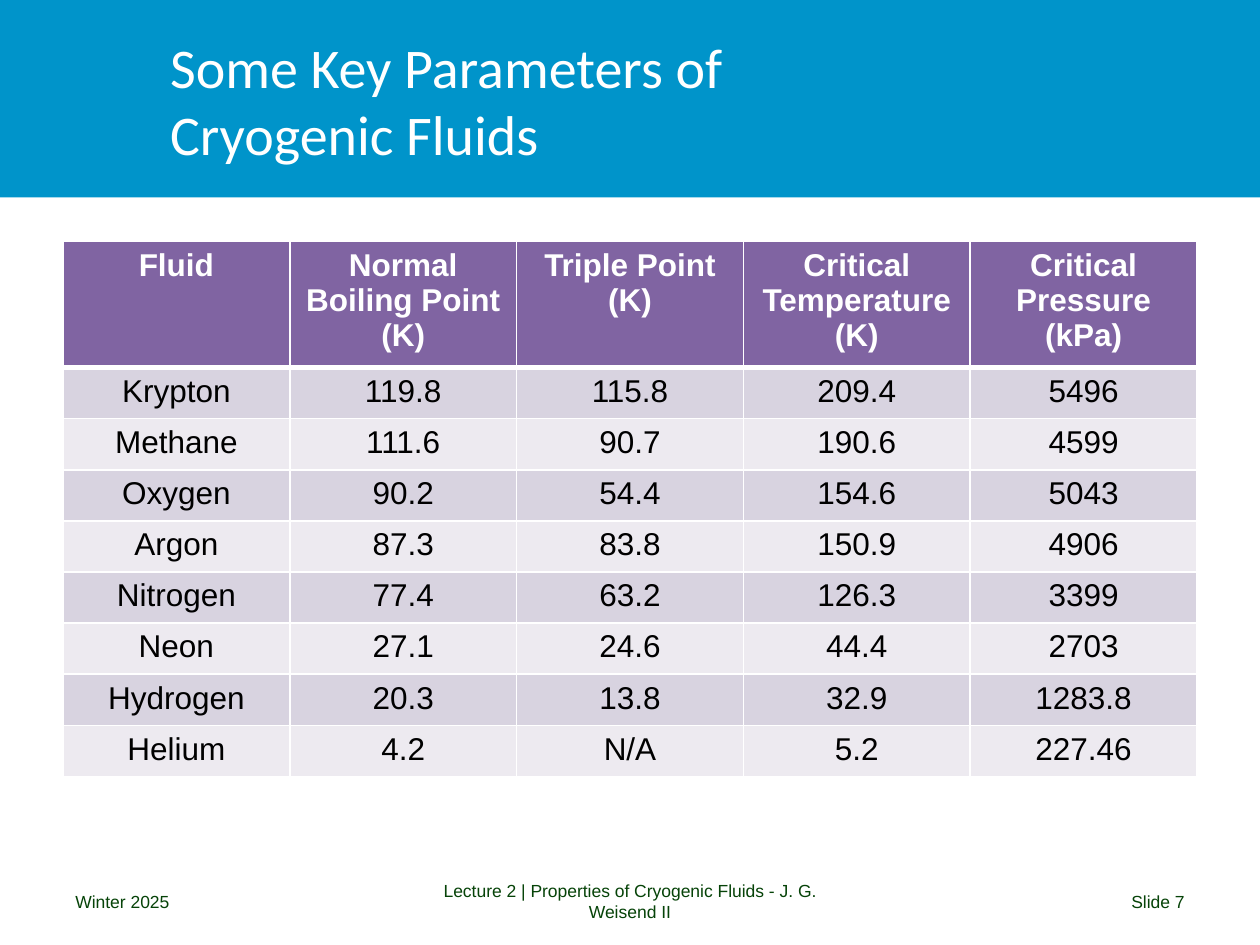
from dataclasses import dataclass

from lxml import etree
from pptx import Presentation
from pptx import util as u
from pptx.dml.color import RGBColor
from pptx.enum import shapes, text
from pptx.oxml.ns import qn


@dataclass(frozen=True)
class Theme:
    """Colours, fonts and type sizes of the slide."""
    banner: str = "0094CA"
    header: str = "8064A2"
    bands: tuple = ("D8D3E0", "EDEAF0")
    white: str = "FFFFFF"
    ink: str = "000000"
    footer: str = "064308"
    title_font: str = "Calibri"
    body_font: str = "Arial"
    title_size: int = 32
    table_size: int = 18
    footer_size: int = 10


THEME = Theme()
ALIGN = text.PP_ALIGN
HEADINGS = ["Fluid", "Normal Boiling Point (K)", "Triple Point (K)",
            "Critical Temperature (K)", "Critical Pressure\n(kPa)"]
FLUIDS = [
    ["Krypton", "119.8", "115.8", "209.4", "5496"],
    ["Methane", "111.6", "90.7", "190.6", "4599"],
    ["Oxygen", "90.2", "54.4", "154.6", "5043"],
    ["Argon", "87.3", "83.8", "150.9", "4906"],
    ["Nitrogen", "77.4", "63.2", "126.3", "3399"],
    ["Neon", "27.1", "24.6", "44.4", "2703"],
    ["Hydrogen", "20.3", "13.8", "32.9", "1283.8"],
    ["Helium", "4.2", "N/A", "5.2", "227.46"],
]


def write(tf, words, *, size, color, font=THEME.body_font, bold=False, align=ALIGN.LEFT):
    """Fill a text frame; a newline starts a paragraph and a vertical tab breaks a line."""
    tf.word_wrap = True
    tf.text = words
    for p in tf.paragraphs:
        p.alignment = align
        for r in p.runs:
            r.font.name, r.font.size, r.font.bold = font, u.Pt(size), bold
            r.font.color.rgb = RGBColor.from_string(color)


def add_label(s, left, top, width, height, words, **fmt):
    """Add a vertically centred text box, with its box in centimetres."""
    sp = s.shapes.add_textbox(u.Cm(left), u.Cm(top), u.Cm(width), u.Cm(height))
    write(sp.text_frame, words, **fmt)
    sp.text_frame.vertical_anchor = text.MSO_ANCHOR.MIDDLE


def add_banner(s, left, top, width, height):
    """Add the coloured band and the title inside it."""
    sp = s.shapes.add_shape(shapes.MSO_SHAPE.RECTANGLE,
                            u.Cm(left), u.Cm(top), u.Cm(width), u.Cm(height))
    sp.shadow.inherit = False
    sp.fill.solid()
    sp.fill.fore_color.rgb = RGBColor.from_string(THEME.banner)
    sp.line.fill.background()
    add_label(s, left + 3.18, top + 0.43, width - 5.56, height - 0.81,
              "Some Key Parameters of \vCryogenic Fluids",
              font=THEME.title_font, size=THEME.title_size, color=THEME.white)


def set_borders(cell, **widths):
    """Draw white borders on a cell, with widths in points keyed by side."""
    tcPr = cell._tc.get_or_add_tcPr()
    for side, width in widths.items():
        ln = etree.SubElement(tcPr, qn(f"a:ln{side}"), w=str(u.Pt(width)))
        fill = etree.SubElement(ln, qn("a:solidFill"))
        etree.SubElement(fill, qn("a:srgbClr"), val=THEME.white)


def add_fluid_table(s, left, top, width, header_height, row_height):
    """Add the fluid properties table with a header and banded rows."""
    rows = [HEADINGS] + FLUIDS
    height = header_height + row_height * len(FLUIDS)
    table = s.shapes.add_table(len(rows), len(HEADINGS), u.Cm(left), u.Cm(top),
                               u.Cm(width), u.Cm(height)).table
    for column in table.columns:
        column.width = u.Cm(width / len(HEADINGS))
    for i, values in enumerate(rows):
        head = i == 0
        table.rows[i].height = u.Cm(header_height if head else row_height)
        fill = THEME.header if head else THEME.bands[(i - 1) % 2]
        for cell, value in zip(table.rows[i].cells, values):
            write(cell.text_frame, value, size=THEME.table_size, bold=head,
                  color=THEME.white if head else THEME.ink, align=ALIGN.CENTER)
            set_borders(cell, L=1, R=1, T=3 if i == 1 else 1, B=3 if head else 1)
            cell.fill.solid()
            cell.fill.fore_color.rgb = RGBColor.from_string(fill)


def add_footer(s, left, top, width, height):
    """Add the date, lecture name and slide number across the foot."""
    side, middle = 5.93, 8.04
    parts = [
        (0, side, "Winter 2025", ALIGN.LEFT),
        ((width - middle) / 2, middle,
         "Lecture 2 | Properties of Cryogenic Fluids - J. G. Weisend II", ALIGN.CENTER),
        (width - side, side, "Slide 7", ALIGN.RIGHT),
    ]
    for offset, part_width, words, align in parts:
        add_label(s, left + offset, top, part_width, height, words,
                  size=THEME.footer_size, color=THEME.footer, align=align)


def main():
    """Build the slide and save it."""
    prs = Presentation()
    prs.slide_width, prs.slide_height = u.Cm(25.4), u.Cm(19.05)
    s = prs.slides.add_slide(prs.slide_layouts[6])
    add_banner(s, 0, 0, 25.4, 3.98)
    add_footer(s, 1.27, 17.66, 22.86, 1.01)
    add_fluid_table(s, 1.27, 4.87, 22.86, 2.54, 1.03)
    prs.save("out.pptx")


if __name__ == "__main__":
    main()
